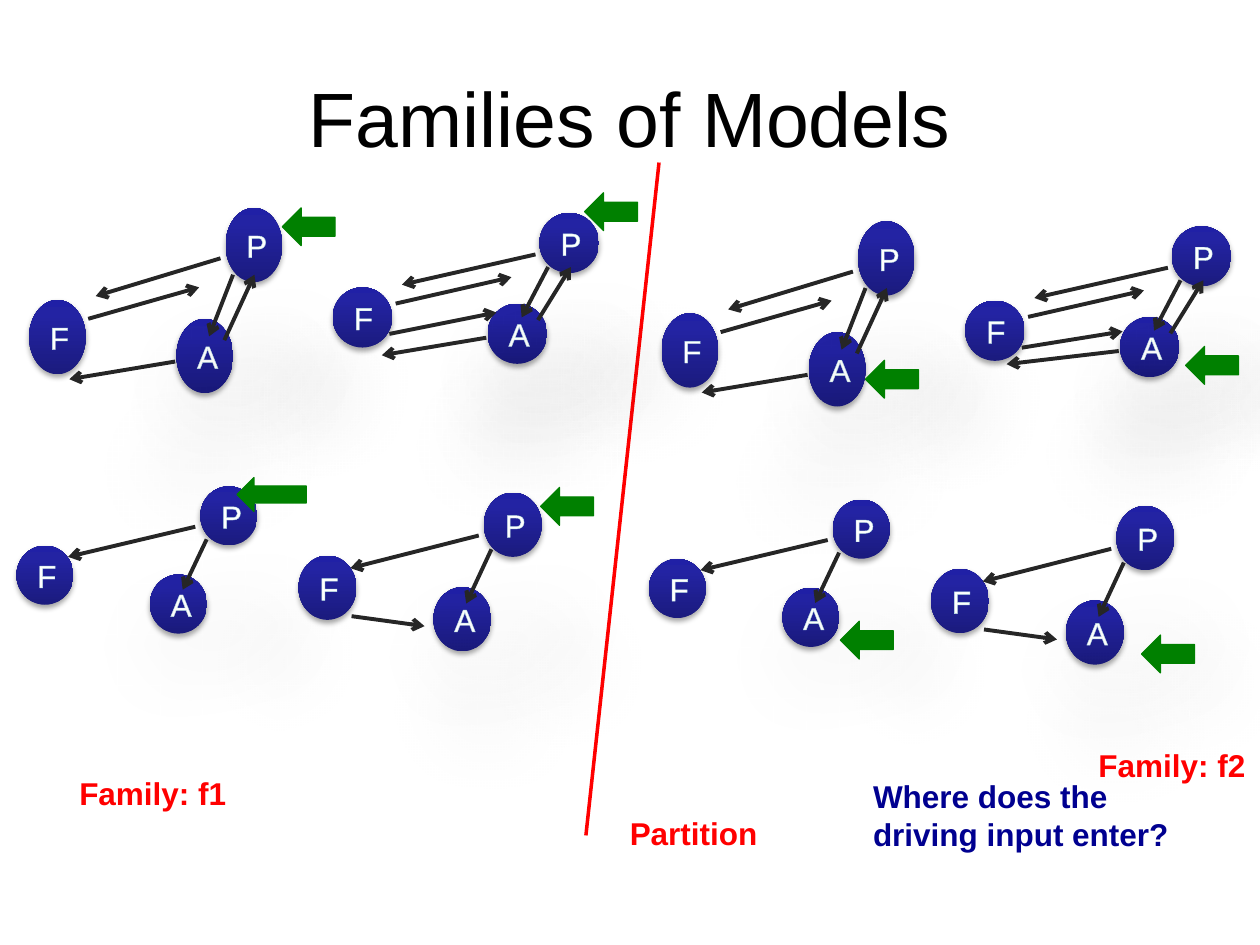
from lxml import etree
from pptx import Presentation
from pptx.dml.color import RGBColor
from pptx.enum.shapes import MSO_CONNECTOR, MSO_SHAPE
from pptx.enum.text import MSO_ANCHOR, MSO_AUTO_SIZE, PP_ALIGN
from pptx.util import Pt

OVAL, BLOCK = MSO_SHAPE.OVAL, MSO_SHAPE.LEFT_ARROW
LINE = MSO_CONNECTOR.STRAIGHT
MIDDLE, CENTER = MSO_ANCHOR.MIDDLE, PP_ALIGN.CENTER
GROW = MSO_AUTO_SIZE.SHAPE_TO_FIT_TEXT
NS = 'xmlns:a="http://schemas.openxmlformats.org/drawingml/2006/main"'

COLORS = {
    "black": "000000", "white": "FFFFFF", "red": "FF0000", "navy": "000090",
    "green": "008000", "dark": "262626", "pale": "BBE0E3",
    "low": "1B1B7E", "mid": "2323A3", "top": "2020A6",
}
HUES = {name: RGBColor.from_string(code) for name, code in COLORS.items()}

STOPS = "".join(
    f'<a:gs pos="{pos}"><a:srgbClr val="{COLORS[name]}"/></a:gs>'
    for pos, name in ((0, "low"), (80000, "mid"), (100000, "top"))
)
GRAD = f'<a:gradFill {NS}><a:gsLst>{STOPS}</a:gsLst><a:lin ang="16200000" scaled="0"/></a:gradFill>'
SHADOW = (
    f'<a:effectLst {NS}><a:outerShdw blurRad="{{}}" dist="{{}}" dir="{{}}" rotWithShape="0">'
    f'<a:srgbClr val="{COLORS["black"]}"><a:alpha val="{{}}"/></a:srgbClr></a:outerShdw></a:effectLst>'
)
NEAR = SHADOW.format(Pt(3.1), Pt(1.8), 5400000, 35000)
FAR = SHADOW.format(Pt(47.8), Pt(74), 2700000, 43000)
FLAT = f'<a:effectLst {NS}/>'
HEAD = f'<a:tailEnd {NS} type="arrow"/>'
EDGE = (
    f'<a:ln {NS} w="{Pt(0.8)}"><a:solidFill><a:srgbClr val="{COLORS["pale"]}"/></a:solidFill></a:ln>'
)

prs = Presentation()
prs.slide_width, prs.slide_height = Pt(720), Pt(540)
slide = prs.slides.add_slide(prs.slide_layouts[6])
shapes = slide.shapes


def add_line(ends, color, width, effect):
    line = shapes.add_connector(LINE, *(Pt(v) for v in ends))
    line.line.color.rgb = HUES[color]
    line.line.width = Pt(width)
    line._element.spPr.append(etree.fromstring(effect))
    return line


def add_run(para, text, size, color, bold=False):
    run = para.add_run()
    run.text = text
    run.font.name = "Arial"
    run.font.size = Pt(size)
    run.font.bold = bold
    run.font.color.rgb = HUES[color]
    return run


title = shapes.add_textbox(Pt(36), Pt(21.6), Pt(648), Pt(90))
frame = title.text_frame
frame.word_wrap = True
frame.vertical_anchor = MIDDLE
frame.paragraphs[0].alignment = CENTER
add_run(frame.paragraphs[0], "Families of Models", 44, "black")

add_line((334.8, 477.4, 376.6, 92.9), "red", 2, FLAT)

models = [
    ((32.4, 42.5), ((16.6, 171.4), (128.9, 118.8), (100.8, 182.2)),
     [(126, 147.6, 54.7, 169.2), (50.4, 182.2, 113.8, 164.2),
      (100.1, 206.6, 39.6, 216.7), (133.2, 157, 119.5, 192.2),
      (128.2, 194.4, 145.4, 157)]),
    ((34, 34.4), ((190.1, 164.2), (308.2, 121.7), (278.6, 173.5)),
     [(306, 145.4, 229.7, 162.7), (226.1, 173.5, 292.3, 158.4),
      (313.2, 152.6, 298.1, 181.4), (307.4, 182.9, 326.2, 152.6)]),
    ((32.6, 33.8), ((9.4, 311.8), (114.5, 277.9), (85.7, 328.3)),
     [(111.6, 301, 38.9, 318.2), (118.1, 308.2, 104.4, 337)]),
    ((33.1, 36.7), ((170.6, 317.5), (276.5, 281.5), (247.7, 335.5)),
     [(273.6, 306, 200.2, 324.7), (280.8, 313.9, 266.4, 344.9),
      (200.9, 352.1, 242.6, 357.8)]),
]
families = [
    (0, 0,
     [(277.9, 193, 218.2, 203), (222.5, 190.8, 283.7, 178.6)],
     [(161.3, 118.8, 30.2, 21.6), (334.1, 110.2, 30.2, 21.6),
      (135.4, 272.9, 39.6, 19.4), (308.9, 278.6, 30.2, 21.6)]),
    (361.4, 7.6,
     [(277.9, 193, 213.8, 200.5), (222.5, 191.1, 280.1, 181.8)],
     [(480.2, 355, 30.2, 21.6), (652.3, 362.9, 30.2, 21.6),
      (494.6, 205.9, 30.2, 21.6), (677.5, 198, 30.2, 21.6)]),
]

for dx, dy, extra, inputs in families:
    for num, (size, spots, links) in enumerate(models):
        for name, (x, y) in zip("FPA", spots):
            node = shapes.add_shape(OVAL, Pt(x + dx), Pt(y + dy), *(Pt(v) for v in size))
            props = node._element.spPr
            props.append(etree.fromstring(GRAD))
            node.line.fill.background()
            props.append(etree.fromstring(NEAR))
            para = node.text_frame.paragraphs[0]
            para.alignment = CENTER
            run = add_run(para, name, 18, "white")
            run.font._element.insert(0, etree.fromstring(EDGE))
        for x1, y1, x2, y2 in links + (extra if num == 1 else []):
            link = add_line((x1 + dx, y1 + dy, x2 + dx, y2 + dy), "dark", 2.25, FAR)
            link.line._get_or_add_ln().append(etree.fromstring(HEAD))
    for box in inputs:
        arrow = shapes.add_shape(BLOCK, *(Pt(v) for v in box))
        arrow.shadow.inherit = False
        arrow.fill.solid()
        arrow.fill.fore_color.rgb = HUES["green"]
        arrow.line.color.rgb = HUES["green"]
        arrow.line.width = Pt(0.75)

labels = [
    ((352.8, 461.5, 88.6, 28.8), "red", ["Partition"]),
    ((491.8, 440.6, 185, 51.1), "navy", ["Where does the", "driving input enter?"]),
    ((38.2, 438.5, 99.4, 28.8), "red", ["Family: f1"]),
    ((620.6, 422.6, 99.4, 28.8), "red", ["Family: f2"]),
]
for box, color, rows in labels:
    label = shapes.add_textbox(*(Pt(v) for v in box))
    frame = label.text_frame
    frame.word_wrap = False
    frame.auto_size = GROW
    for num, row in enumerate(rows):
        para = frame.add_paragraph() if num else frame.paragraphs[0]
        add_run(para, row, 18, color, True)

prs.save("out.pptx")
